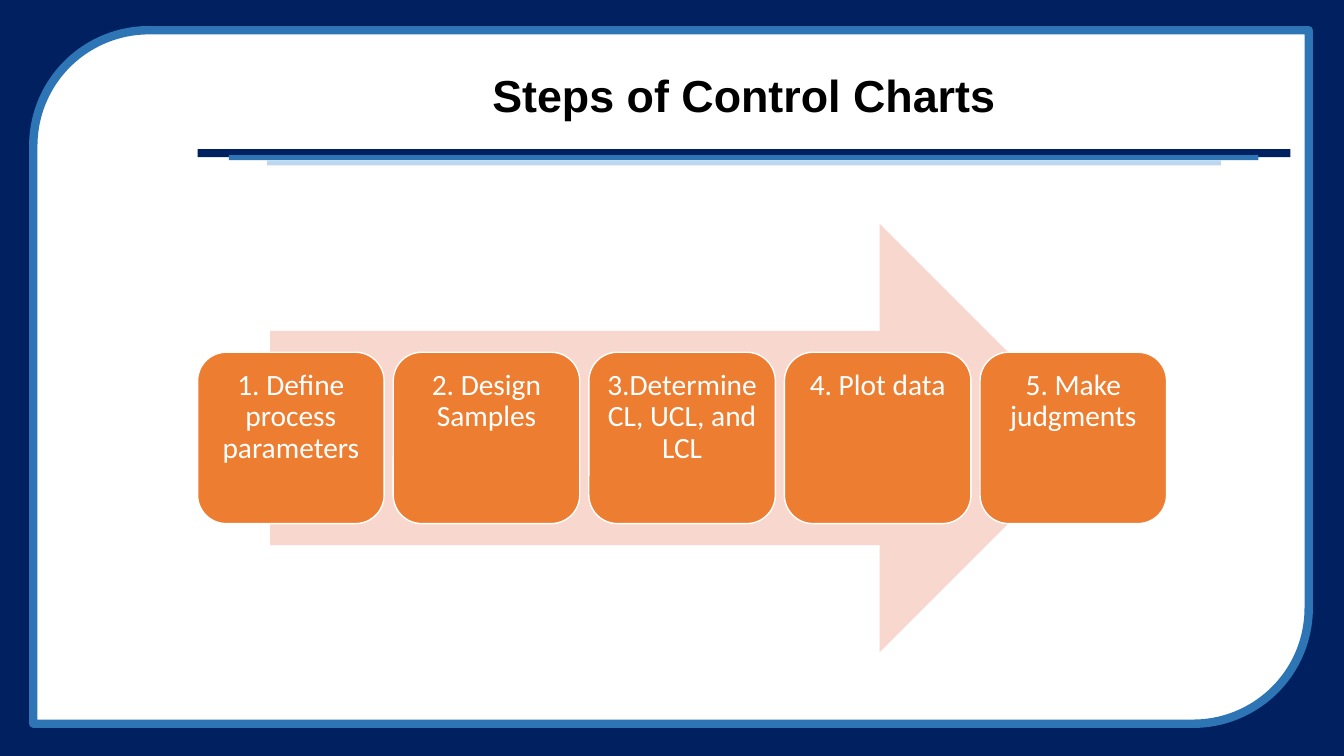
from dataclasses import dataclass

from pptx import Presentation
from pptx.dml.color import RGBColor
from pptx.enum.shapes import MSO_SHAPE
from pptx.enum.text import MSO_ANCHOR, MSO_AUTO_SIZE, PP_ALIGN
from pptx.util import Inches, Pt

RECTANGLE = MSO_SHAPE.RECTANGLE
ROUNDED_RECTANGLE = MSO_SHAPE.ROUNDED_RECTANGLE
DIAGONAL_ROUND = MSO_SHAPE.ROUND_2_DIAG_RECTANGLE
RIGHT_ARROW = MSO_SHAPE.RIGHT_ARROW
CENTER = PP_ALIGN.CENTER
TOP = MSO_ANCHOR.TOP
MIDDLE = MSO_ANCHOR.MIDDLE
NO_AUTOFIT = MSO_AUTO_SIZE.NONE
TITLE_ONLY_LAYOUT = 5


@dataclass(frozen=True)
class Theme:
    navy: str = "002060"
    blue: str = "2E75B6"
    pale_blue: str = "BDD7EE"
    orange: str = "ED7D31"
    pale_orange: str = "F8D7CE"
    white: str = "FFFFFF"
    black: str = "000000"
    title_font: str = "Arial"
    step_font: str = "Calibri"
    title_size: int = 32
    step_size: int = 21


THEME = Theme()
SLIDE_WIDTH, SLIDE_HEIGHT = 13.33, 7.5
STEPS = (
    "1. Define process parameters",
    "2. Design Samples",
    "3.Determine CL, UCL, and LCL",
    "4. Plot data",
    "5. Make judgments",
)


def add_filled_shape(slide, kind, box, fill, line=None, line_width=1):
    """Add a flat shape at box (left, top, width, height in inches)."""
    shape = slide.shapes.add_shape(kind, *(Inches(length) for length in box))
    shape.shadow.inherit = False
    shape.fill.solid()
    shape.fill.fore_color.rgb = RGBColor.from_string(fill)
    if line:
        shape.line.color.rgb = RGBColor.from_string(line)
        shape.line.width = Pt(line_width)
    else:
        shape.line.fill.background()
    return shape


def set_text(text_frame, text, font_name, size, color, bold=False):
    text_frame.text = text
    text_frame.word_wrap = True
    paragraph = text_frame.paragraphs[0]
    paragraph.alignment = CENTER
    paragraph.line_spacing = 0.9
    font = paragraph.runs[0].font
    font.name = font_name
    font.size = Pt(size)
    font.bold = bold
    font.color.rgb = RGBColor.from_string(color)


def add_frame(slide, box):
    left, top, width, height = box
    add_filled_shape(slide, RECTANGLE, box, THEME.navy)
    panel = (left + 0.33, top + 0.3, width - 0.68, height - 0.62)
    add_filled_shape(slide, DIAGONAL_ROUND, panel, THEME.white, THEME.blue, 6)


def add_title(slide, box, text):
    """Place the title with its three stepped rules underneath."""
    left, top, width, height = box
    rules = (
        (0, 0.99, 10.84, 0.08, THEME.navy),
        (0.31, 1.05, 10.21, 0.05, THEME.blue),
        (0.69, 1.1, 9.46, 0.05, THEME.pale_blue),
    )
    for indent, drop, rule_width, thickness, color in rules:
        rule = (left + indent, top + drop, rule_width, thickness)
        add_filled_shape(slide, RECTANGLE, rule, color)

    title = slide.shapes.title
    title.left, title.top = Inches(left), Inches(top)
    title.width, title.height = Inches(width), Inches(height)
    set_text(title.text_frame, text, THEME.title_font, THEME.title_size,
             THEME.black, bold=True)
    title.text_frame.auto_size = NO_AUTOFIT
    title.text_frame.vertical_anchor = MIDDLE
    # Bring the title in front of the frame panel
    title.element.getparent().append(title.element)


def add_process(slide, box, steps):
    """Spread the step cards evenly over a wide arrow."""
    left, top, width, height = box
    arrow_width = 0.85 * width
    arrow = (left + (width - arrow_width) / 2, top, arrow_width, height)
    add_filled_shape(slide, RIGHT_ARROW, arrow, THEME.pale_orange)

    card_width, card_height = 1.85, 0.4 * height
    pitch = (width - card_width) / (len(steps) - 1)
    card_top = top + (height - card_height) / 2
    for index, step in enumerate(steps):
        card_box = (left + index * pitch, card_top, card_width, card_height)
        card = add_filled_shape(slide, ROUNDED_RECTANGLE, card_box,
                                THEME.orange, THEME.white)
        text_frame = card.text_frame
        set_text(text_frame, step, THEME.step_font, THEME.step_size, THEME.white)
        text_frame.vertical_anchor = TOP
        text_frame.margin_left = text_frame.margin_right = Inches(0.09)
        text_frame.margin_top = text_frame.margin_bottom = Inches(0.09)


def main():
    presentation = Presentation()
    presentation.slide_width = Inches(SLIDE_WIDTH)
    presentation.slide_height = Inches(SLIDE_HEIGHT)
    layout = presentation.slide_layouts[TITLE_ONLY_LAYOUT]
    slide = presentation.slides.add_slide(layout)
    add_frame(slide, (0, 0, SLIDE_WIDTH, SLIDE_HEIGHT))
    add_title(slide, (1.96, 0.49, 10.84, 0.97), "Steps of Control Charts")
    add_process(slide, (1.96, 2.22, 9.61, 4.25), STEPS)
    presentation.save("out.pptx")


if __name__ == "__main__":
    main()
